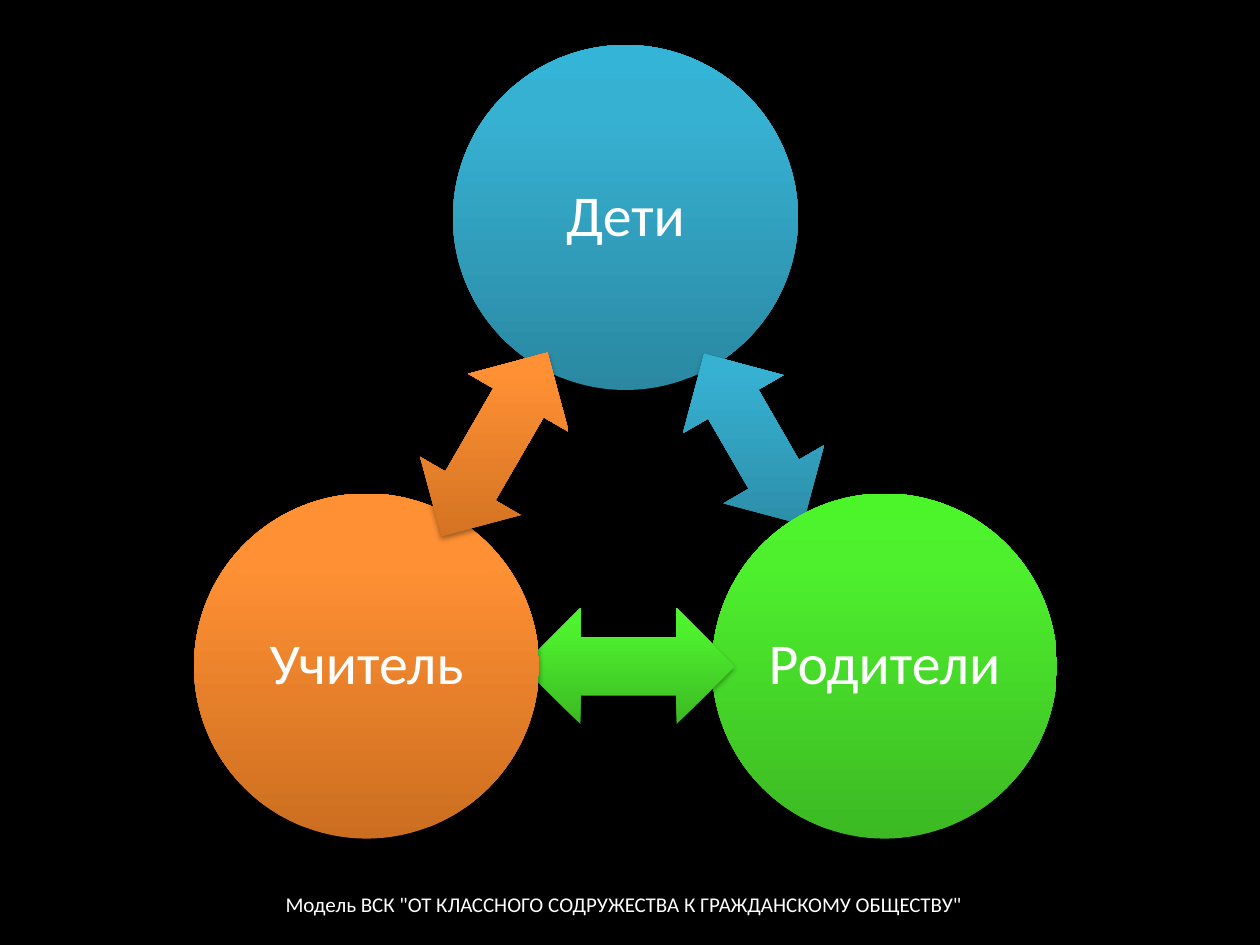
import math

from lxml import etree
from pptx import Presentation
from pptx import util as u
from pptx.dml.color import RGBColor
from pptx.enum import shapes, text
from pptx.oxml.ns import qn

EMU_PER_PX = 914400 / 126
FONT = "Calibri"
WHITE = "FFFFFF"

# Label, gradient colours from bottom to top, length of the arrow to the next circle
NODES = [
    ("Дети", ("2A88A2", "37B1D2", "34B4D6"), 197),
    ("Родители", ("3CB923", "4EF02E", "4CF52A"), 212),
    ("Учитель", ("CC6E20", "FF9034", "FF9136"), 212),
]
GRADIENT_STOPS = (0, 80, 100)


def px(value):
    return u.Emu(round(value * EMU_PER_PX))


def color(hex_string):
    return RGBColor.from_string(hex_string)


def format_paragraph(paragraph, size):
    paragraph.alignment = text.PP_ALIGN.CENTER
    for run in paragraph.runs:
        run.font.name = FONT
        run.font.size = u.Pt(size)
        run.font.color.rgb = color(WHITE)


def set_gradient(shape, colors):
    """Vertical gradient that stays upright when the shape is rotated."""
    shape.fill.gradient()
    shape.fill.gradient_angle = 90
    gradient = shape._element.spPr.find(qn("a:gradFill"))
    gradient.set("rotWithShape", "0")
    stops = gradient.find(qn("a:gsLst"))
    for stop in list(stops):
        stops.remove(stop)
    for position, hex_string in zip(GRADIENT_STOPS, colors):
        stop = etree.SubElement(stops, qn("a:gs"), pos=str(position * 1000))
        etree.SubElement(stop, qn("a:srgbClr"), val=hex_string)


def set_shadow(shape):
    shape.shadow.inherit = False
    effects = shape._element.spPr.find(qn("a:effectLst"))
    shadow = etree.SubElement(
        effects, qn("a:outerShdw"), blurRad=str(u.Pt(3.1)), dist=str(u.Pt(1.8)),
        dir="5400000", rotWithShape="0")
    shadow_color = etree.SubElement(shadow, qn("a:srgbClr"), val="000000")
    etree.SubElement(shadow_color, qn("a:alpha"), val="35000")


def add_centered_shape(slide, kind, center, width, height, colors):
    x, y = center
    shape = slide.shapes.add_shape(
        kind, px(x - width / 2), px(y - height / 2), px(width), px(height))
    set_gradient(shape, colors)
    shape.line.fill.background()
    set_shadow(shape)
    return shape


def add_circle(slide, center, diameter, label, colors):
    circle = add_centered_shape(
        slide, shapes.MSO_SHAPE.OVAL, center, diameter, diameter, colors)
    frame = circle.text_frame
    frame.text = label
    frame.word_wrap = False
    frame.vertical_anchor = text.MSO_ANCHOR.MIDDLE
    frame.margin_left = frame.margin_right = px(6)
    frame.margin_top = frame.margin_bottom = px(6)
    paragraph = frame.paragraphs[0]
    paragraph.line_spacing = 0.9
    format_paragraph(paragraph, 33)


def add_arrow(slide, start, end, length, colors):
    """Double arrow between two circles, drawn slightly nearer the first."""
    angle = math.atan2(end[1] - start[1], end[0] - start[0])
    shift = -3
    center = ((start[0] + end[0]) / 2 + shift * math.cos(angle),
              (start[1] + end[1]) / 2 + shift * math.sin(angle))
    arrow = add_centered_shape(
        slide, shapes.MSO_SHAPE.LEFT_RIGHT_ARROW, center, length, 116, colors)
    arrow.rotation = round(math.degrees(angle)) % 360


def add_cycle(slide, left, top, width):
    """Circles on the corners of an equilateral triangle, joined by arrows."""
    diameter = 345
    radius = (width - diameter) / math.sqrt(3)
    center_x, center_y = left + width / 2, top + diameter / 2 + radius
    angles = [math.radians(-90 + 120 * index) for index in range(len(NODES))]
    centers = [(center_x + radius * math.cos(angle), center_y + radius * math.sin(angle))
               for angle in angles]
    for index, (label, colors, arrow_length) in enumerate(NODES):
        following = centers[(index + 1) % len(NODES)]
        add_circle(slide, centers[index], diameter, label, colors)
        add_arrow(slide, centers[index], following, arrow_length, colors)


def add_caption(slide, left, top, width, height):
    caption = slide.shapes.title
    caption.left, caption.top = px(left), px(top)
    caption.width, caption.height = px(width), px(height)
    frame = caption.text_frame
    frame.text = 'Модель ВСК "ОТ КЛАССНОГО СОДРУЖЕСТВА К ГРАЖДАНСКОМУ ОБЩЕСТВУ"'
    frame.word_wrap = True
    frame.auto_size = text.MSO_AUTO_SIZE.NONE
    frame.vertical_anchor = text.MSO_ANCHOR.MIDDLE
    format_paragraph(frame.paragraphs[0], 12)


def main():
    presentation = Presentation()
    presentation.slide_width, presentation.slide_height = px(1260), px(945)
    slide = presentation.slides.add_slide(presentation.slide_layouts[5])
    slide.background.fill.solid()
    slide.background.fill.fore_color.rgb = color("000000")

    add_caption(slide, 272, 879, 704, 50)
    add_cycle(slide, 194, 45, 863)
    presentation.save("out.pptx")


if __name__ == "__main__":
    main()
